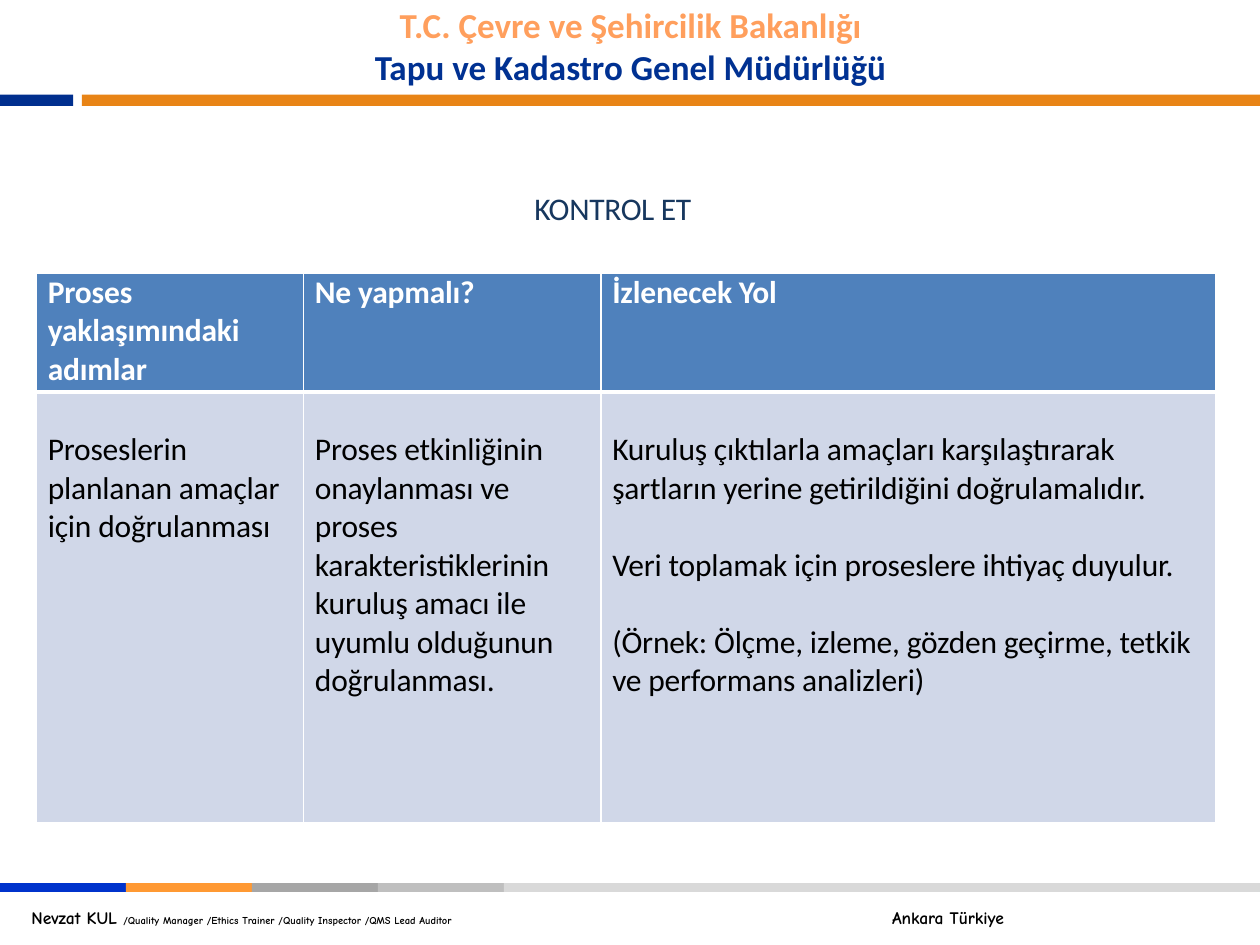
from typing import NamedTuple

from lxml import etree
from pptx import Presentation
from pptx import util as u
from pptx.dml.color import RGBColor
from pptx.enum import shapes, text
from pptx.oxml import ns

PX = 9144  # one px is a hundredth of an inch


class Bar(NamedTuple):
    left: int
    top: int
    width: int
    height: int
    color: str


class Run(NamedTuple):
    words: str
    size: float
    color: str
    bold: bool = False
    font: str = "Calibri"
    spacing: int = 0  # hundredths of a point


class Row(NamedTuple):
    height: int
    fill: str
    color: str
    bold: bool
    margin_top: int
    borders: dict[str, float]  # side: width in points
    cells: list[list[str]]


HEADER_BARS = [Bar(0, 75, 58, 9, "002F8E"), Bar(65, 75, 935, 9, "E88416")]
FOOTER_COLORS = ["0033CC", "FF9933", "A6A6A6", "BFBFBF", "D9D9D9"]
FOOTER_STEP, FOOTER_OVERLAP = 100, 3
COLUMN_WIDTHS = [212, 236, 488]
ROWS = [
    Row(94, "4F81BC", "FFFFFF", True, 0, {"L": 1, "R": 1, "T": 1, "B": 3}, [
        ["Proses yaklaşımındaki adımlar"],
        ["Ne yapmalı?"],
        ["İzlenecek Yol"],
    ]),
    Row(342, "D0D7E8", "000000", False, 31, {"L": 1, "R": 1, "T": 3, "B": 1}, [
        ["Proseslerin planlanan amaçlar için doğrulanması"],
        ["Proses etkinliğinin onaylanması ve proses karakteristiklerinin "
         "kuruluş amacı ile uyumlu olduğunun doğrulanması."],
        ["Kuruluş çıktılarla amaçları karşılaştırarak şartların yerine "
         "getirildiğini doğrulamalıdır.",
         "Veri toplamak için proseslere ihtiyaç duyulur.",
         "(Örnek: Ölçme, izleme, gözden geçirme, tetkik ve performans analizleri)"],
    ]),
]


def px(*lengths: int) -> list[u.Emu]:
    return [u.Emu(length * PX) for length in lengths]


def rgb(color: str) -> RGBColor:
    return RGBColor.from_string(color)


def set_all(target, values: dict) -> None:
    for name, value in values.items():
        setattr(target, name, value)


def set_frame(frame, left=0, top=0, right=0, bottom=0) -> None:
    margins = px(left, top, right, bottom)
    names = ["margin_left", "margin_top", "margin_right", "margin_bottom"]
    set_all(frame, dict(zip(names, margins)) | {"word_wrap": True})


def add_run(paragraph, item: Run) -> None:
    run = paragraph.add_run()
    run.text = item.words
    set_all(run.font, {"size": u.Pt(item.size), "bold": item.bold, "name": item.font})
    run.font.color.rgb = rgb(item.color)
    if item.spacing:
        run.font._element.set("spc", str(item.spacing))


def add_bar(slide, bar: Bar) -> None:
    shape = slide.shapes.add_shape(shapes.MSO_SHAPE.RECTANGLE, *px(*bar[:4]))
    shape.shadow.inherit = False
    shape.fill.solid()
    shape.fill.fore_color.rgb = rgb(bar.color)
    shape.line.fill.background()


def add_header(slide) -> None:
    for bar in HEADER_BARS:
        add_bar(slide, bar)
    frame = slide.shapes.add_textbox(*px(201, -2, 599, 77)).text_frame
    set_frame(frame, 10, 5, 10, 5)
    lines = [Run("T.C. Çevre ve Şehircilik Bakanlığı", 20, "FF9F5D", True),
             Run("Tapu ve Kadastro Genel Müdürlüğü", 20, "003192", True)]
    for index, line in enumerate(lines):
        paragraph = frame.add_paragraph() if index else frame.paragraphs[0]
        paragraph.alignment = text.PP_ALIGN.CENTER
        add_run(paragraph, line)


def add_footer(slide) -> None:
    last = len(FOOTER_COLORS) - 1
    for index, color in enumerate(FOOTER_COLORS):
        left = index * FOOTER_STEP
        width = 1000 - left if index == last else FOOTER_STEP + FOOTER_OVERLAP
        add_bar(slide, Bar(left, 701, width, 7, color))
    frame = slide.shapes.add_textbox(*px(0, 715, 1000, 27)).text_frame
    set_frame(frame, 25, 5, 10, 5)
    paragraph = frame.paragraphs[0]
    # A tab stop places the city
    tabs = etree.SubElement(paragraph._p.get_or_add_pPr(), ns.qn("a:tabLst"))
    etree.SubElement(tabs, ns.qn("a:tab"), pos=str(683 * PX), algn="l")
    for words, size in [
        ("Nevzat KUL ", 10),
        ("/Quality Manager /Ethics Trainer /Quality Inspector /QMS Lead Auditor", 6),
        ("\tAnkara Türkiye", 10),
    ]:
        add_run(paragraph, Run(words, size, "000000", True, "Comic Neue"))


def format_title(slide) -> None:
    title = slide.shapes.title
    set_all(title, dict(zip(["left", "top", "width", "height"], px(375, 150, 353, 97))))
    frame = title.text_frame
    set_frame(frame, left=49)
    set_all(frame, {"vertical_anchor": text.MSO_ANCHOR.TOP,
                    "auto_size": text.MSO_AUTO_SIZE.NONE})
    paragraph = frame.paragraphs[0]
    paragraph.alignment = text.PP_ALIGN.LEFT
    add_run(paragraph, Run("KONTROL ET", 18, "17375E", spacing=-20))


def add_borders(cell, borders: dict[str, float]) -> None:
    properties = cell._tc.get_or_add_tcPr()
    for side, width in borders.items():
        line = etree.SubElement(properties, ns.qn(f"a:ln{side}"), w=str(u.Pt(width)))
        fill = etree.SubElement(line, ns.qn("a:solidFill"))
        etree.SubElement(fill, ns.qn("a:srgbClr"), val="FFFFFF")


def fill_cell(cell, row: Row, paragraphs: list[str]) -> None:
    add_borders(cell, row.borders)
    cell.fill.solid()
    cell.fill.fore_color.rgb = rgb(row.fill)
    set_frame(cell, left=9, top=row.margin_top, right=5)
    cell.vertical_anchor = text.MSO_ANCHOR.TOP
    frame = cell.text_frame
    for index, words in enumerate(paragraphs):
        paragraph = frame.add_paragraph() if index else frame.paragraphs[0]
        if index:
            paragraph.space_before = u.Pt(22)
        add_run(paragraph, Run(words, 18, row.color, row.bold, spacing=-10))


def add_step_table(slide) -> None:
    size = px(29, 217, sum(COLUMN_WIDTHS), sum(row.height for row in ROWS))
    table = slide.shapes.add_table(len(ROWS), len(COLUMN_WIDTHS), *size).table
    set_all(table, {"first_row": False, "horz_banding": False})
    for column, width in zip(table.columns, px(*COLUMN_WIDTHS)):
        column.width = width
    for table_row, row in zip(table.rows, ROWS):
        table_row.height = px(row.height)[0]
        for cell, paragraphs in zip(table_row.cells, row.cells):
            fill_cell(cell, row, paragraphs)


def main() -> None:
    presentation = Presentation()
    set_all(presentation, dict(zip(["slide_width", "slide_height"], px(1000, 750))))
    slide = presentation.slides.add_slide(presentation.slide_layouts.get_by_name("Title Only"))
    add_header(slide)
    add_footer(slide)
    format_title(slide)
    add_step_table(slide)
    presentation.save("out.pptx")


if __name__ == "__main__":
    main()
